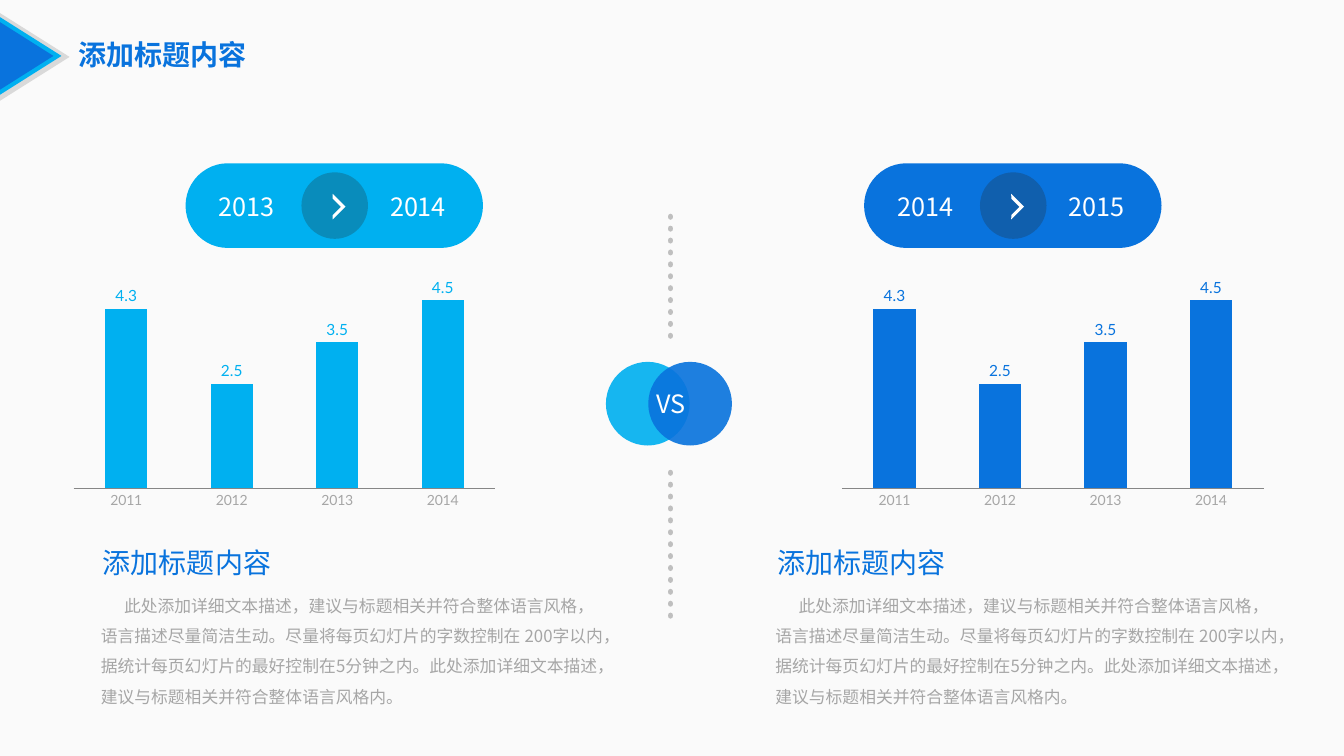
import dataclasses

import pptx
import pptx.chart.data
import pptx.dml.color
import pptx.enum.chart
import pptx.enum.dml
import pptx.enum.shapes
import pptx.enum.text
import pptx.oxml
import pptx.oxml.ns
import pptx.util

Inches = pptx.util.Inches
Pt = pptx.util.Pt
RGB = pptx.dml.color.RGBColor.from_string
qn = pptx.oxml.ns.qn
SHAPE = pptx.enum.shapes.MSO_SHAPE
ALIGN = pptx.enum.text.PP_ALIGN
ANCHOR = pptx.enum.text.MSO_ANCHOR


@dataclasses.dataclass(frozen=True)
class Theme:
    background: str = "FAFAFA"
    cyan: str = "00B0F0"
    blue: str = "0973DD"
    white: str = "FFFFFF"
    dark: str = "262626"
    pale: str = "D9D9D9"
    dots: str = "BFBFBF"
    muted: str = "A6A6A6"
    axis: str = "868686"
    text_font: str = "Noto Sans CJK SC"
    chart_font: str = "Lato"
    heading_size: int = 20
    label_size: int = 18
    body_size: int = 12
    value_size: int = 11
    category_size: int = 10


theme = Theme()


def add_filled(shapes, kind, box, color, opacity=100, rotation=0):
    shape = shapes.add_shape(kind, *[Inches(length) for length in box])
    shape.shadow.inherit = False
    shape.rotation = rotation
    shape.fill.solid()
    shape.fill.fore_color.rgb = RGB(color)
    shape.line.fill.background()
    if opacity < 100:
        alpha = shape._element.spPr.find(".//" + qn("a:srgbClr"))
        alpha.append(pptx.oxml.parse_xml(
            f'<a:alpha xmlns:a="{pptx.oxml.ns.nsdecls("a").split(chr(34))[1]}" val="{opacity * 1000}"/>'))
    return shape


def write_text(shape, box, text, size, color, align=ALIGN.LEFT, bold=False):
    shape.left, shape.top, shape.width, shape.height = [Inches(length) for length in box]
    frame = shape.text_frame
    frame.word_wrap = True
    frame.auto_size = pptx.enum.text.MSO_AUTO_SIZE.NONE
    frame.vertical_anchor = ANCHOR.TOP
    frame.text = text
    paragraph = frame.paragraphs[0]
    paragraph.alignment = align
    paragraph.space_before = Pt(0)
    properties = paragraph._p.get_or_add_pPr()
    properties.set("marL", "0")
    properties.set("indent", "0")
    properties.append(properties.makeelement(qn("a:buNone"), {}))
    paragraph.font.size = Pt(size)
    paragraph.font.bold = bold
    paragraph.font.color.rgb = RGB(color)
    paragraph.font.name = theme.text_font
    defaults = properties.find(qn("a:defRPr"))
    defaults.append(defaults.makeelement(qn("a:ea"), {"typeface": theme.text_font}))
    return paragraph


presentation = pptx.Presentation()
presentation.slide_width = Inches(13.33)
presentation.slide_height = Inches(7.5)
comparison_layout = presentation.slide_layouts[4]
slide = presentation.slides.add_slide(comparison_layout)
slide.background.fill.solid()
slide.background.fill.fore_color.rgb = RGB(theme.background)
placeholders = {shape.placeholder_format.idx: shape for shape in slide.placeholders}

title_marker = slide.shapes.add_group_shape()
for box, color in [
    ((-0.09, 0.22, 0.87, 0.69), theme.pale),
    ((-0.08, 0.25, 0.77, 0.61), theme.cyan),
    ((-0.07, 0.29, 0.67, 0.53), theme.blue),
]:
    add_filled(title_marker.shapes, SHAPE.ISOSCELES_TRIANGLE, box, color, rotation=90)
write_text(slide.shapes.title, (0.68, 0.32, 2.36, 0.44), "添加标题内容",
           theme.heading_size, theme.blue, bold=True)

description = (
    "此处添加详细文本描述，建议与标题相关并符合整体语言风格，语言描述尽量简洁生动。"
    "尽量将每页幻灯片的字数控制在 200字以内，据统计每页幻灯片的最好控制在5分钟之内。"
    "此处添加详细文本描述，建议与标题相关并符合整体语言风格内。"
)
chart_data = pptx.chart.data.CategoryChartData()
chart_data.categories = ["2011", "2012", "2013", "2014"]
chart_data.add_series("Series 1", (4.3, 2.5, 3.5, 4.5))

sides = [
    (theme.cyan, 0.64, 1.84, 0.92, ("2013", "2014"), 1),
    (theme.blue, 8.26, 8.57, 7.61, ("2014", "2015"), 3),
]
for color, chart_left, pill_left, text_left, years, heading_index in sides:
    chart = slide.shapes.add_chart(
        pptx.enum.chart.XL_CHART_TYPE.COLUMN_CLUSTERED,
        Inches(chart_left), Inches(2.54), Inches(4.5), Inches(2.59), chart_data).chart
    chart.has_legend = False
    chart.has_title = False
    chart.font.name = theme.chart_font
    chart.font.size = Pt(theme.category_size)
    chart.font.color.rgb = RGB(theme.muted)
    chart.value_axis.visible = False
    chart.value_axis.has_major_gridlines = False
    chart.value_axis.minimum_scale = 0
    chart.value_axis.maximum_scale = 5
    chart.category_axis.major_tick_mark = pptx.enum.chart.XL_TICK_MARK.NONE
    chart.category_axis.format.line.color.rgb = RGB(theme.axis)
    chart.category_axis.format.line.width = Pt(0.75)
    plot = chart.plots[0]
    plot.gap_width = 150
    plot.overlap = -25
    plot.vary_by_categories = False
    plot.series[0].format.fill.solid()
    plot.series[0].format.fill.fore_color.rgb = RGB(color)
    plot.has_data_labels = True
    labels = plot.data_labels
    labels.show_value = True
    labels.position = pptx.enum.chart.XL_LABEL_POSITION.OUTSIDE_END
    labels.font.name = theme.chart_font
    labels.font.size = Pt(theme.value_size)
    labels.font.color.rgb = RGB(color)
    plot_area = chart._chartSpace.find(".//" + qn("c:plotArea"))
    for old_layout in plot_area.findall(qn("c:layout")):
        plot_area.remove(old_layout)
    layout = plot_area.makeelement(qn("c:layout"), {})
    plot_area.insert(0, layout)
    manual = layout.makeelement(qn("c:manualLayout"), {})
    layout.append(manual)
    for tag, value in [("layoutTarget", "inner"), ("xMode", "edge"), ("yMode", "edge"),
                       ("x", "0.02"), ("y", "0.09"), ("w", "0.93"), ("h", "0.8")]:
        manual.append(manual.makeelement(qn("c:" + tag), {"val": value}))

    pill = slide.shapes.add_group_shape().shapes
    capsule = add_filled(pill, SHAPE.ROUNDED_RECTANGLE, (pill_left, 1.62, 2.95, 0.84), color)
    capsule.adjustments[0] = 0.5
    add_filled(pill, SHAPE.OVAL, (pill_left + 1.15, 1.71, 0.66, 0.66), theme.dark, opacity=26)
    chevron = add_filled(pill, SHAPE.HALF_FRAME, (pill_left + 1.37, 1.96, 0.18, 0.18),
                         theme.white, rotation=135)
    chevron.adjustments[0] = 0.17
    chevron.adjustments[1] = 0.19
    for year, offset in zip(years, (0.23, 1.93)):
        write_text(pill.add_textbox(0, 0, 0, 0), (pill_left + offset, 1.85, 0.91, 0.4),
                   year, theme.label_size, theme.white)

    write_text(placeholders[heading_index], (text_left, 5.36, 2.5, 0.44), "添加标题内容",
               theme.heading_size, theme.blue)
    body = placeholders[heading_index + 1]
    paragraph = write_text(body, (text_left + 0.08, 5.81, 5.01, 1.25), description,
                           theme.body_size, theme.muted)
    paragraph.line_spacing = 1.5
    paragraph._p.pPr.set("indent", str(Inches(0.23)))
    frame = body.text_frame
    frame.margin_left = frame.margin_top = frame.margin_right = frame.margin_bottom = 0

versus = slide.shapes.add_group_shape().shapes
for left, color in [(6.01, theme.cyan), (6.43, theme.blue)]:
    add_filled(versus, SHAPE.OVAL, (left, 3.59, 0.83, 0.83), color, opacity=91)
write_text(versus.add_textbox(0, 0, 0, 0), (6.26, 3.8, 0.79, 0.4), "VS",
           theme.label_size, theme.white, ALIGN.CENTER)

for top, bottom in [(2.15, 3.39), (4.69, 6.22)]:
    divider = slide.shapes.add_connector(
        pptx.enum.shapes.MSO_CONNECTOR.STRAIGHT,
        Inches(6.65), Inches(top), Inches(6.65), Inches(bottom))
    divider.line.color.rgb = RGB(theme.dots)
    divider.line.width = Pt(4.25)
    divider.line.dash_style = pptx.enum.dml.MSO_LINE.ROUND_DOT
    properties = divider._element.spPr
    properties.find(qn("a:ln")).set("cap", "rnd")
    properties.append(properties.makeelement(qn("a:effectLst"), {}))

presentation.save("out.pptx")
